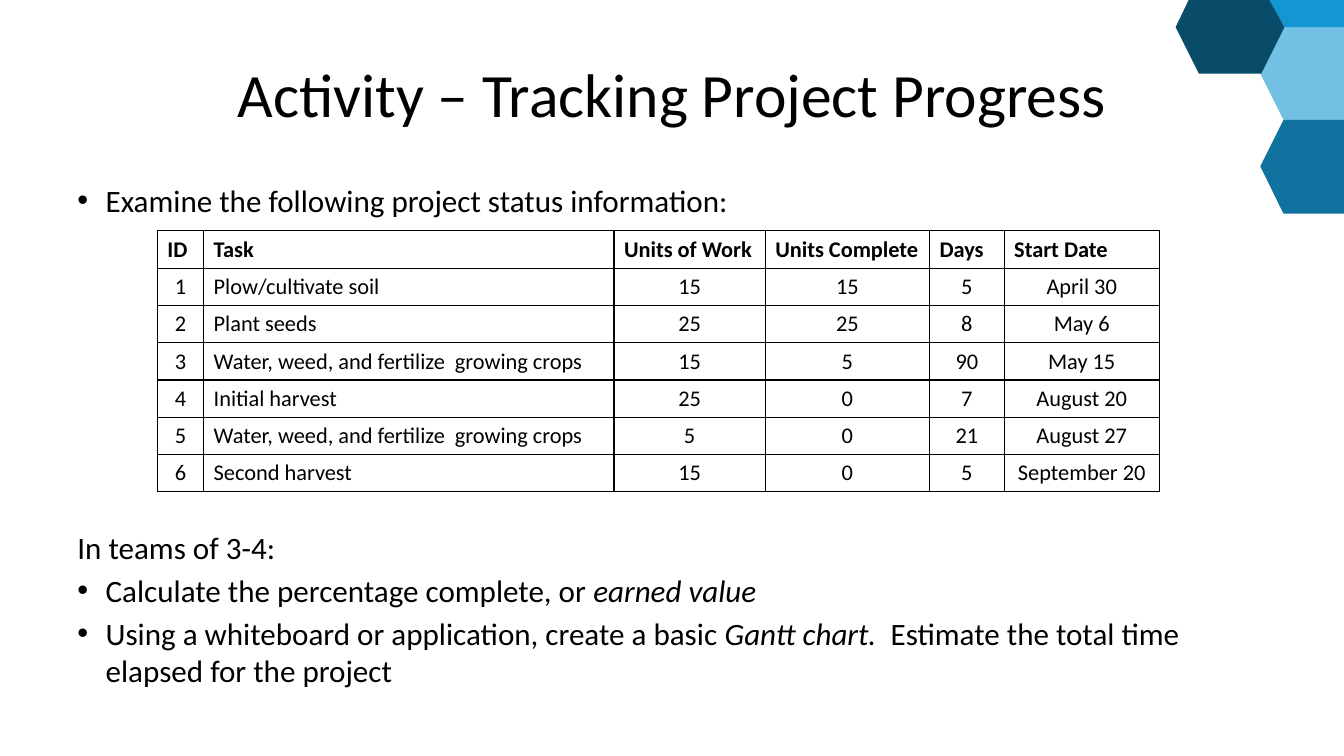
from dataclasses import dataclass

from lxml import etree
from pptx import Presentation
from pptx.dml.color import RGBColor
from pptx.enum.text import MSO_ANCHOR, PP_ALIGN
from pptx.oxml.ns import qn
from pptx.util import Inches, Pt

LEFT, CENTER = PP_ALIGN.LEFT, PP_ALIGN.CENTER
TOP, MIDDLE = MSO_ANCHOR.TOP, MSO_ANCHOR.MIDDLE


@dataclass(frozen=True)
class Theme:
    font: str = "Calibri"
    ink: str = "000000"
    sky: str = "72C0E3"
    blue: str = "10729E"
    navy: str = "094C6A"
    azure: str = "1396D1"
    title: float = 44
    body: float = 22.2
    cell: float = 16
    rule: float = 1


THEME = Theme()

# Hexagon outlines, measured from the top left of their region
HEXES = [
    (THEME.sky, [(0.84, 0.73), (1.07, 0.26), (1.67, 0.26), (1.67, 1.19), (1.07, 1.19)]),
    (THEME.blue, [(0.84, 1.65), (1.07, 1.19), (1.67, 1.19), (1.67, 2.12), (1.07, 2.12)]),
    (THEME.navy, [(0, 0.27), (0.13, 0), (0.95, 0), (1.08, 0.27), (0.85, 0.73), (0.23, 0.73)]),
    (THEME.azure, [(0.93, 0), (1.67, 0), (1.67, 0.27), (1.08, 0.27)]),
]

# Each item: bullet or not, space before in points, runs of (text, italic)
ITEMS = [
    (True, 4, [("Examine the following project status information:", False)]),
    (False, 221.5, [("In teams of 3-4:", False)]),
    (True, 4, [("Calculate the percentage complete, or ", False), ("earned value", True)]),
    (True, 4, [
        ("Using a whiteboard or application, create a basic ", False),
        ("Gantt chart.", True),
        ("  Estimate the total time elapsed for the project", False),
    ]),
]

COLS = [0.46, 4.07, 1.5, 1.63, 0.74, 1.54]
ROW = 0.37
ROWS = [
    ("ID", "Task", "Units of Work", "Units Complete", "Days", "Start Date"),
    ("1", "Plow/cultivate soil", "15", "15", "5", "April 30"),
    ("2", "Plant seeds", "25", "25", "8", "May 6"),
    ("3", "Water, weed, and fertilize  growing crops", "15", "5", "90", "May 15"),
    ("4", "Initial harvest", "25", "0", "7", "August 20"),
    ("5", "Water, weed, and fertilize  growing crops", "5", "0", "21", "August 27"),
    ("6", "Second harvest", "15", "0", "5", "September 20"),
]


def add_run(para, text, size, bold=False, italic=False):
    run = para.add_run()
    run.text = text
    font = run.font
    font.name, font.size = THEME.font, Pt(size)
    font.bold, font.italic = bold, italic
    font.color.rgb = RGBColor.from_string(THEME.ink)


def add_box(slide, box, anchor):
    frame = slide.shapes.add_textbox(*map(Inches, box)).text_frame
    frame.word_wrap = True
    frame.vertical_anchor = anchor
    return frame


def set_bullet(para):
    props = para._p.get_or_add_pPr()
    props.set("marL", str(Inches(0.28)))
    props.set("indent", str(Inches(-0.28)))
    etree.SubElement(props, qn("a:buFont"), typeface="Arial")
    etree.SubElement(props, qn("a:buChar"), char="•")


def set_edges(cell):
    props = cell._tc.get_or_add_tcPr()
    for side in ("L", "R", "T", "B"):
        line = etree.SubElement(props, qn(f"a:ln{side}"), w=str(Pt(THEME.rule)))
        fill = etree.SubElement(line, qn("a:solidFill"))
        etree.SubElement(fill, qn("a:srgbClr"), val=THEME.ink)


def draw_hexes(slide, left, top):
    for color, spots in HEXES:
        points = [(Inches(left + x), Inches(top + y)) for x, y in spots]
        pen = slide.shapes.build_freeform(*points[0])
        pen.add_line_segments(points[1:], close=True)
        shape = pen.convert_to_shape()
        shape.shadow.inherit = False
        shape.fill.solid()
        shape.fill.fore_color.rgb = RGBColor.from_string(color)
        shape.line.fill.background()


def draw_title(slide, box):
    para = add_box(slide, box, MIDDLE).paragraphs[0]
    para.alignment = CENTER
    add_run(para, "Activity – Tracking Project Progress", THEME.title)


def draw_body(slide, box):
    frame = add_box(slide, box, TOP)
    for i, (bullet, gap, runs) in enumerate(ITEMS):
        para = frame.add_paragraph() if i else frame.paragraphs[0]
        para.space_before = Pt(gap)
        if bullet:
            set_bullet(para)
        for text, italic in runs:
            add_run(para, text, THEME.body, italic=italic)


def draw_table(slide, left, top):
    size = (left, top, sum(COLS), ROW * len(ROWS))
    table = slide.shapes.add_table(len(ROWS), len(COLS), *map(Inches, size)).table
    table.first_row = table.horz_banding = False
    for col, width in zip(table.columns, COLS):
        col.width = Inches(width)
    for r, texts in enumerate(ROWS):
        table.rows[r].height = Inches(ROW)
        for c, text in enumerate(texts):
            cell = table.cell(r, c)
            set_edges(cell)
            cell.fill.background()
            para = cell.text_frame.paragraphs[0]
            # Headings and task names sit left, all else is centred
            para.alignment = LEFT if r == 0 or c == 1 else CENTER
            add_run(para, text, THEME.cell, bold=r == 0)


def main():
    deck = Presentation()
    deck.slide_width, deck.slide_height = Inches(13.33), Inches(7.5)
    slide = deck.slides.add_slide(deck.slide_layouts[6])
    draw_hexes(slide, 11.66, 0)
    draw_body(slide, (0.67, 1.75, 12, 4.95))
    draw_title(slide, (0.67, 0.3, 12, 1.25))
    draw_table(slide, 1.56, 2.29)
    deck.save("out.pptx")


if __name__ == "__main__":
    main()
